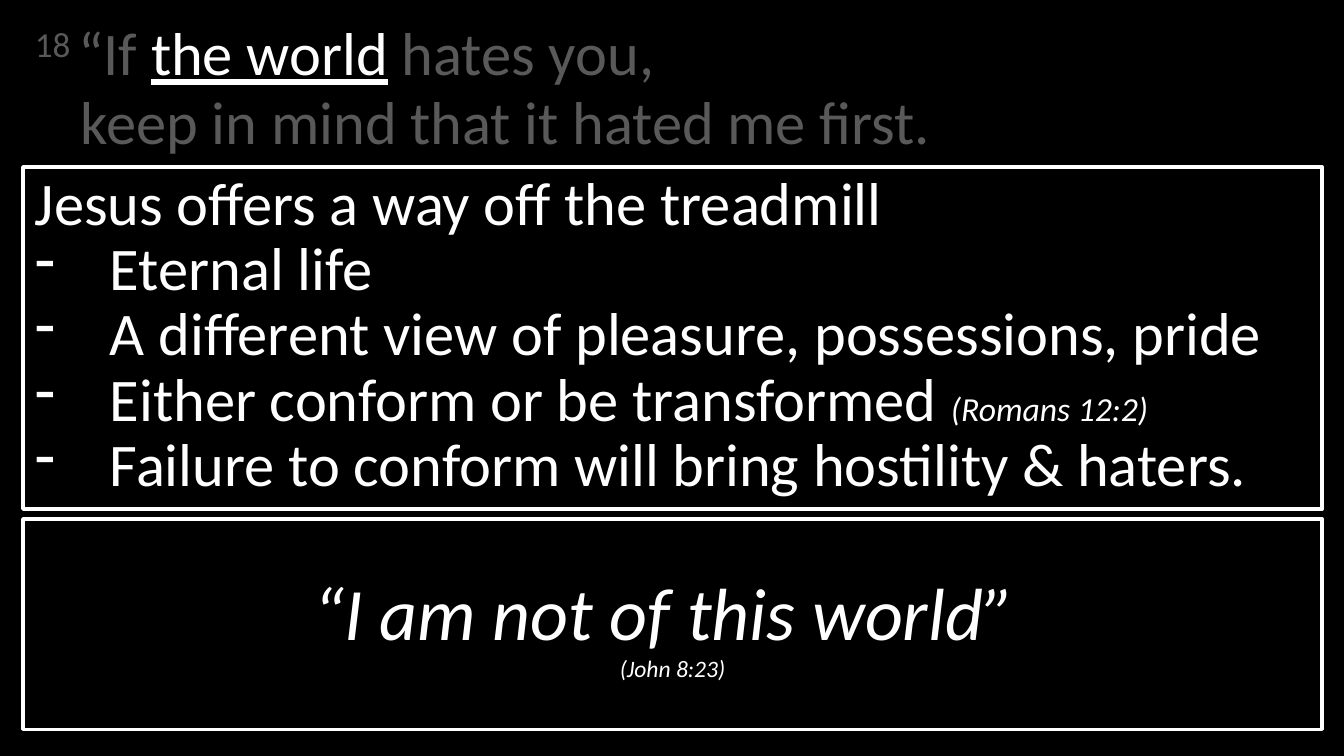
from lxml.etree import SubElement
from pptx import Presentation
from pptx.dml.color import RGBColor
from pptx.enum.shapes import MSO_SHAPE
from pptx.enum.text import MSO_ANCHOR, PP_ALIGN
from pptx.oxml.ns import qn
from pptx.util import Inches, Pt

COLORS = {"black": "000000", "white": "FFFFFF", "dim": "595959"}
FONT = "Calibri"
LEFT, WIDTH = 0.19, 10.74

VERSE = [
    ("18\u00a0", "dim", {"baseline": "30000"}),
    ("“If ", "dim", {}),
    ("the world", "white", {"u": "sng"}),
    (" hates you, \vkeep in mind that it hated me first.", "dim", {}),
]
OFFER = "Jesus offers a way off the treadmill"
POINTS = [
    [("Eternal life", 36, False)],
    [("A different view of pleasure, possessions, pride", 36, False)],
    [("Either conform or be transformed ", 36, False), ("(Romans 12:2)", 20, True)],
    [("Failure to conform will bring hostility & haters.", 36, False)],
]
QUOTE = [("“I am not of this world” \v", 44, True), ("(John 8:23)", 14, True)]


def color(name):
    return RGBColor.from_string(COLORS[name])


def prepare(box, top_inset=0.05):
    frame = box.text_frame
    frame.word_wrap = True
    frame.vertical_anchor = MSO_ANCHOR.TOP
    frame.margin_top = Inches(top_inset)
    return frame


def add_panel(page, top, height, top_inset=0.05):
    panel = page.shapes.add_shape(
        MSO_SHAPE.RECTANGLE, Inches(LEFT), Inches(top), Inches(WIDTH), Inches(height))
    panel.shadow.inherit = False
    panel.fill.solid()
    panel.fill.fore_color.rgb = color("black")
    panel.line.color.rgb = color("white")
    panel.line.width = Pt(2)
    return prepare(panel, top_inset)


def format_para(para, spacing, hang=0, align=PP_ALIGN.LEFT, bullet=None):
    para.alignment = align
    para.line_spacing = spacing
    para.font.name = FONT
    para.font.color.rgb = color("white")
    properties = para._p.get_or_add_pPr()
    properties.set("marL", str(Inches(hang)))
    properties.set("indent", str(-Inches(hang)))
    if bullet:
        mark = SubElement(properties, qn("a:buChar"))
        mark.set("char", bullet)
        properties.insert_element_before(mark, "a:tabLst", "a:defRPr")


def add_spans(para, spans):
    for text, size, italic in spans:
        for index, piece in enumerate(text.split("\v")):
            if index:
                para.add_line_break()
            if piece:
                span = para.add_run()
                span.text = piece
                span.font.name = FONT
                span.font.size = Pt(size)
                span.font.italic = italic
                span.font.color.rgb = color("white")


def add_verse(page):
    box = page.shapes.add_textbox(Inches(LEFT), Inches(0.12), Inches(WIDTH), Inches(1.25))
    para = prepare(box).paragraphs[0]
    format_para(para, 0.95, 0.38)
    for text, shade, extras in VERSE:
        start = len(para.runs)
        add_spans(para, [(text, 36, False)])
        for span in para.runs[start:]:
            span.font.color.rgb = color(shade)
            for name, value in extras.items():
                span.font._element.set(name, value)


def main():
    deck = Presentation()
    deck.slide_width, deck.slide_height = Inches(11.11), Inches(6.25)
    page = deck.slides.add_slide(deck.slide_layouts[6])
    page.background.fill.solid()
    page.background.fill.fore_color.rgb = color("black")

    add_verse(page)

    offer = add_panel(page, 1.38, 2.83)
    format_para(offer.paragraphs[0], 0.9, 0.19)
    add_spans(offer.paragraphs[0], [(OFFER, 36, False)])
    for point in POINTS:
        para = offer.add_paragraph()
        format_para(para, 0.9, 0.62, bullet="-")
        add_spans(para, point)

    quote = add_panel(page, 4.29, 1.74, top_inset=0.48).paragraphs[0]
    format_para(quote, 0.9, align=PP_ALIGN.CENTER)
    add_spans(quote, QUOTE)

    deck.save("out.pptx")


if __name__ == "__main__":
    main()
